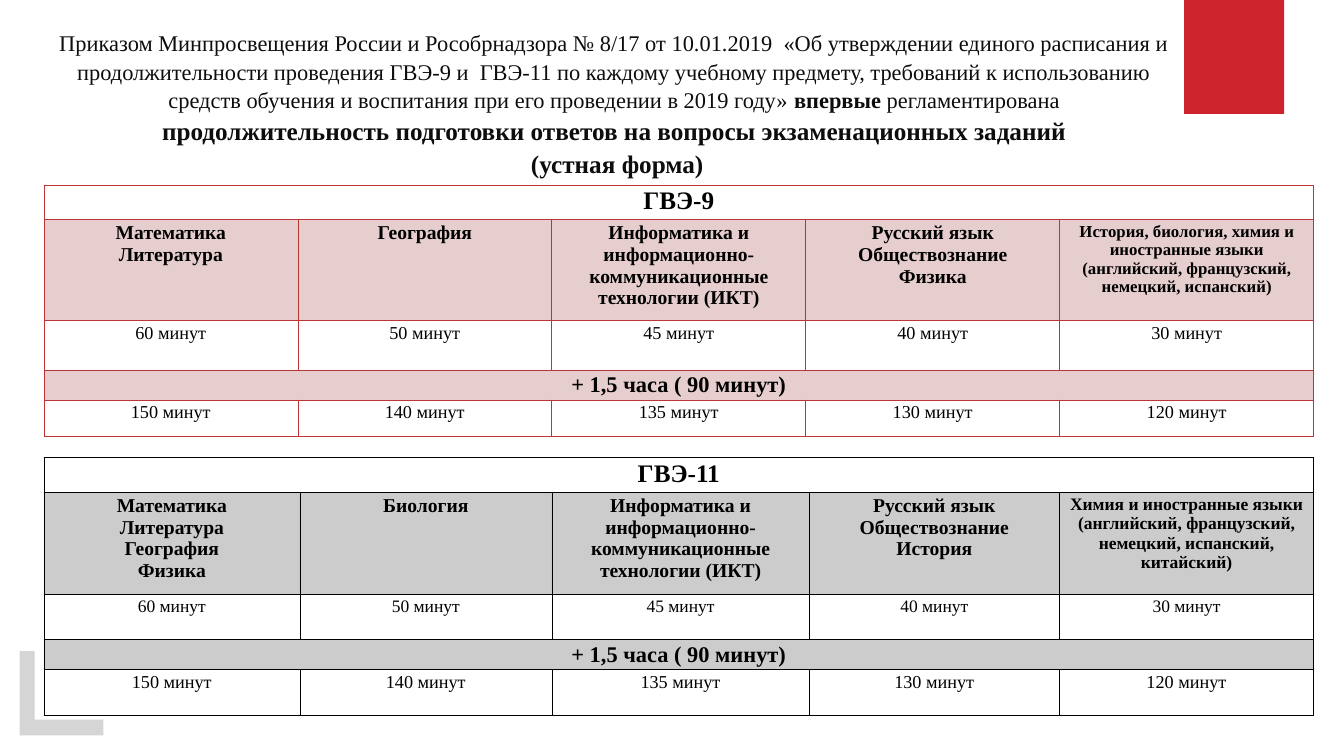
from lxml.etree import SubElement
from pptx import Presentation
from pptx.dml.color import RGBColor
from pptx.enum.shapes import MSO_SHAPE
from pptx.enum.text import MSO_ANCHOR, MSO_AUTO_SIZE, PP_ALIGN
from pptx.oxml.ns import qn
from pptx.util import Emu, Pt

PX = 9144  # EMU in one px, 100 px to the inch
FONT = "Times New Roman"
BLACK = RGBColor(0x00, 0x00, 0x00)
INK = RGBColor(0x0D, 0x0D, 0x0D)
WHITE = RGBColor(0xFF, 0xFF, 0xFF)
RED = RGBColor(0xCC, 0x23, 0x2C)
LINE_RED = RGBColor(0xBA, 0x35, 0x34)
PINK = RGBColor(0xE7, 0xCE, 0xCE)
GREY = RGBColor(0xD5, 0xD5, 0xD5)

IKT = "Информатика и информационно-коммуникационные технологии (ИКТ)"
SUBJECTS_9 = [
    "Математика\nЛитература", "География", IKT,
    "Русский язык\nОбществознание\nФизика",
    "История, биология, химия и иностранные языки "
    "(английский, французский, немецкий, испанский)",
]
SUBJECTS_11 = [
    "Математика\nЛитература\nГеография\nФизика", "Биология", IKT,
    "Русский язык Обществознание\nИстория",
    "Химия и иностранные языки "
    "(английский, французский, немецкий, испанский, китайский)",
]
MINUTES = [60, 50, 45, 40, 30]
EXTRA = 90


def px(n):
    return Emu(n * PX)


def add_text(p, text, size, bold=False, color=BLACK):
    p.alignment = PP_ALIGN.CENTER
    r = p.add_run()
    r.text = text
    r.font.name = FONT
    r.font.size = Pt(size)
    r.font.bold = bold
    r.font.color.rgb = color


def finish_shape(sp, color):
    sp.shadow.inherit = False
    sp.fill.solid()
    sp.fill.fore_color.rgb = color
    sp.line.fill.background()


def add_decor(s):
    # Corner bracket at the bottom left
    fb = s.shapes.build_freeform(205, 1459, scale=PX)
    fb.add_line_segments([(205, 1428), (69, 1428), (69, 1292),
                          (39, 1292), (39, 1459)])
    finish_shape(fb.convert_to_shape(), GREY)
    # Red block at the top right
    sp = s.shapes.add_shape(MSO_SHAPE.RECTANGLE,
                            px(2350), px(-5), px(198), px(231))
    finish_shape(sp, RED)


def add_title(s):
    sp = s.shapes.title
    sp.left, sp.top, sp.width, sp.height = px(87), px(49), px(2263), px(280)
    tf = sp.text_frame
    tf.word_wrap = True
    tf.auto_size = MSO_AUTO_SIZE.NONE
    tf.vertical_anchor = MSO_ANCHOR.TOP
    tf.margin_left = tf.margin_right = px(5)
    tf.margin_top = tf.margin_bottom = px(5)
    p = tf.paragraphs[0]
    p.line_spacing = 1.07
    add_text(p, "Приказом Минпросвещения России и Рособрнадзора № 8/17 от "
             "10.01.2019  «Об утверждении единого расписания и "
             "продолжительности проведения ГВЭ-9 и  ГВЭ-11 по каждому "
             "учебному предмету, требований к использованию средств обучения "
             "и воспитания при его проведении в 2019 году» ", 32, color=INK)
    add_text(p, "впервые ", 32, bold=True, color=INK)
    add_text(p, "регламентирована", 32, color=INK)
    p.add_line_break()
    add_text(p, "продолжительность подготовки ответов на вопросы "
             "экзаменационных заданий", 36, bold=True, color=INK)
    p.add_line_break()
    add_text(p, " (устная форма)", 36, bold=True, color=INK)


def format_cell(cell, line, fill, alpha):
    tc_pr = cell._tc.get_or_add_tcPr()
    for side in ("lnL", "lnR", "lnT", "lnB"):
        ln = SubElement(tc_pr, qn(f"a:{side}"), w=str(Pt(1)))
        solid = SubElement(ln, qn("a:solidFill"))
        SubElement(solid, qn("a:srgbClr"), val=str(line))
    if fill is None:
        cell.fill.background()
        return
    cell.fill.solid()
    cell.fill.fore_color.rgb = fill
    if alpha < 100:
        clr = tc_pr.find(qn("a:solidFill")).find(qn("a:srgbClr"))
        SubElement(clr, qn("a:alpha"), val=str(alpha * 1000))


def add_schedule(s, top, name, subjects, cols, rows, line, plain, shade,
                 alpha=100, last_size=24, minutes_size=26):
    frame = s.shapes.add_table(len(rows), len(cols), px(87), px(top),
                               px(sum(cols)), px(sum(rows)))
    table = frame.table
    table.first_row = table.horz_banding = False
    for col, width in zip(table.columns, cols):
        col.width = px(width)
    for row, height in zip(table.rows, rows):
        row.height = px(height)

    # Text, size and weight of each row; a single text spans the table
    content = [
        ([name], 36, True),
        (subjects, 28, True),
        ([f"{m} минут" for m in MINUTES], minutes_size, False),
        (["+ 1,5 часа ( 90 минут)"], 32, True),
        ([f"{m + EXTRA} минут" for m in MINUTES], 26, False),
    ]
    for i, (texts, size, bold) in enumerate(content):
        shaded = i in (1, 3)
        for j in range(len(cols)):
            format_cell(table.cell(i, j), line, shade if shaded else plain,
                        alpha if shaded else 100)
        if len(texts) == 1:
            table.cell(i, 0).merge(table.cell(i, len(cols) - 1))
        for j, text in enumerate(texts):
            tf = table.cell(i, j).text_frame
            cell_size = last_size if i == 1 and j == len(cols) - 1 else size
            for k, part in enumerate(text.split("\n")):
                p = tf.add_paragraph() if k else tf.paragraphs[0]
                add_text(p, part, cell_size, bold=bold)


def main():
    prs = Presentation()
    prs.slide_width, prs.slide_height = px(2667), px(1500)
    s = prs.slides.add_slide(prs.slide_layouts[5])
    add_decor(s)
    add_title(s)
    add_schedule(s, 367, "ГВЭ-9", SUBJECTS_9, [504] * 5,
                 [69, 200, 98, 57, 73], LINE_RED, WHITE, PINK)
    add_schedule(s, 908, "ГВЭ-11", SUBJECTS_11, [508, 500, 511, 496, 505],
                 [69, 202, 90, 59, 90], BLACK, None, BLACK, alpha=20,
                 last_size=25, minutes_size=25)
    prs.save("out.pptx")


if __name__ == "__main__":
    main()
